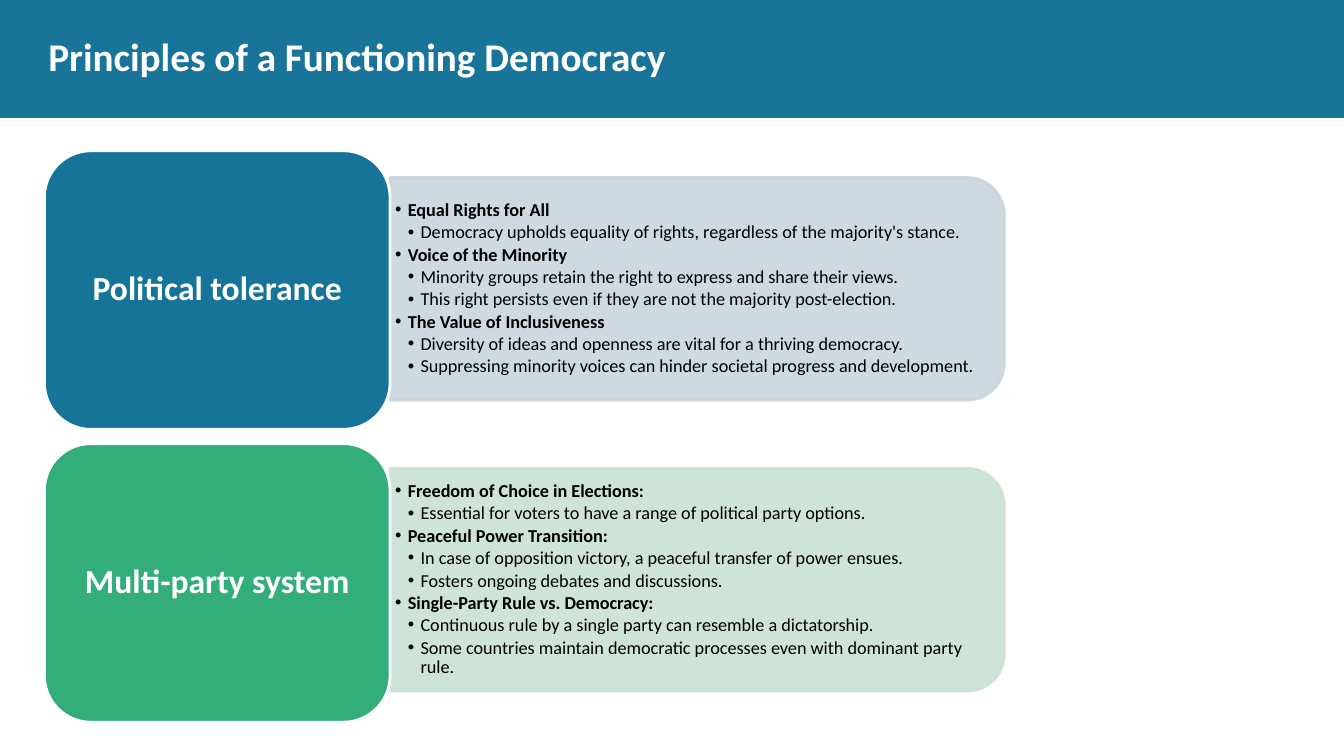
from lxml import etree
from pptx import Presentation
from pptx import util as u
from pptx.dml.color import RGBColor
from pptx.enum import shapes, text
from pptx.oxml.ns import qn

TITLE = "Principles of a Functioning Democracy"
PRINCIPLES = [
    ("Political tolerance", "blue", "pale_blue", [
        ("Equal Rights for All", [
            "Democracy upholds equality of rights, regardless of the majority's stance."]),
        ("Voice of the Minority", [
            "Minority groups retain the right to express and share their views.",
            "This right persists even if they are not the majority post-election."]),
        ("The Value of Inclusiveness", [
            "Diversity of ideas and openness are vital for a thriving democracy.",
            "Suppressing minority voices can hinder societal progress and development."]),
    ]),
    ("Multi-party system", "green", "pale_green", [
        ("Freedom of Choice in Elections:", [
            "Essential for voters to have a range of political party options."]),
        ("Peaceful Power Transition:", [
            "In case of opposition victory, a peaceful transfer of power ensues.",
            "Fosters ongoing debates and discussions."]),
        ("Single-Party Rule vs. Democracy:", [
            "Continuous rule by a single party can resemble a dictatorship.",
            "Some countries maintain democratic processes even with dominant party rule."]),
    ]),
]
COLORS = {"band": "187498", "blue": "157498", "green": "33AE7B", "pale_blue": "C9D5DD",
          "pale_green": "CAE2D4", "white": "FFFFFF", "black": "000000"}
FONT = "Calibri"
INDENT = 0.32
SLIDE_W, SLIDE_H, BAND_H = 33.87, 19.05, 2.97
LABEL_X, LABEL_Y, LABEL_W, LABEL_H, LABEL_STEP = 1.12, 3.8, 8.71, 7.02, 7.38
PANEL_X, PANEL_MID, PANEL_W, PANEL_H, PANEL_STEP = 9.83, 7.28, 15.48, 5.61, 7.33
BODY_W, BODY_H = 15.2, 5.08


def color(name):
    return RGBColor.from_string(COLORS[name])


def add_text(p, content, size, name="white", bold=True, align=None, spacing=None,
             before=0, level=None):
    r = p.add_run()
    r.text = content
    r.font.name, r.font.size, r.font.bold = FONT, u.Pt(size), bold
    r.font.color.rgb = color(name)
    p.alignment, p.line_spacing, p.space_before = align, spacing, u.Pt(before)
    if level is not None:
        p.level = level
        pPr = p._p.get_or_add_pPr()
        pPr.set("marL", str(u.Cm(INDENT * (level + 1))))
        pPr.set("indent", str(-u.Cm(INDENT)))
        etree.SubElement(pPr, qn("a:buFont")).set("typeface", "Arial")
        etree.SubElement(pPr, qn("a:buChar")).set("char", "•")


def add_shape(s, kind, x, y, w, h, fill, line=None, adjust=(), alpha=None):
    sp = s.shapes.add_shape(kind, u.Cm(x), u.Cm(y), u.Cm(w), u.Cm(h))
    sp.shadow.inherit = False
    sp.fill.solid()
    sp.fill.fore_color.rgb = color(fill)
    if line:
        sp.line.color.rgb = color(line)
        sp.line.width = u.Pt(2)
    else:
        sp.line.fill.background()
    for i, value in enumerate(adjust):
        sp.adjustments[i] = value
    if alpha:
        for clr in sp._element.spPr.iter(qn("a:srgbClr")):
            etree.SubElement(clr, qn("a:alpha")).set("val", str(alpha * 1000))
    return sp


def set_frame(tf, side, end):
    tf.word_wrap = True
    tf.vertical_anchor = text.MSO_ANCHOR.MIDDLE
    tf.margin_left = tf.margin_right = u.Cm(side)
    tf.margin_top = tf.margin_bottom = u.Cm(end)
    return tf


def add_panel(s, mid, fill, points):
    x = PANEL_X + (PANEL_W - PANEL_H) / 2
    sp = add_shape(s, shapes.MSO_SHAPE.ROUND_2_SAME_RECTANGLE, x, mid - PANEL_W / 2,
                   PANEL_H, PANEL_W, fill, line=fill, adjust=(0.167, 0), alpha=90)
    sp.rotation = 90
    box = s.shapes.add_textbox(u.Cm(PANEL_X), u.Cm(mid - BODY_H / 2), u.Cm(BODY_W), u.Cm(BODY_H))
    tf = set_frame(box.text_frame, 0.13, 0.08)
    lines = [(line, level) for head, details in points
             for line, level in [(head, 0)] + [(d, 1) for d in details]]
    for i, (line, level) in enumerate(lines):
        p = tf.add_paragraph() if i else tf.paragraphs[0]
        add_text(p, line, 13, "black", bold=level == 0, spacing=0.9,
                 before=1.9 if i else 0, level=level)


def add_label(s, y, fill, label):
    sp = add_shape(s, shapes.MSO_SHAPE.ROUNDED_RECTANGLE, LABEL_X, y, LABEL_W, LABEL_H,
                   fill, line="white", adjust=(0.167,))
    tf = set_frame(sp.text_frame, 0.25, 0.13)
    add_text(tf.paragraphs[0], label, 24, align=text.PP_ALIGN.CENTER, spacing=0.9)


def main():
    prs = Presentation()
    prs.slide_width, prs.slide_height = u.Cm(SLIDE_W), u.Cm(SLIDE_H)
    s = prs.slides.add_slide(prs.slide_layouts[5])
    band = add_shape(s, shapes.MSO_SHAPE.RECTANGLE, 0, 0, SLIDE_W, BAND_H, "band")
    s.shapes._spTree.insert(2, band._element)

    title = s.shapes.title
    title.left, title.top, title.width, title.height = map(u.Cm, (1.22, 0.46, 31.65, 1.88))
    tf = set_frame(title.text_frame, 0, 0)
    add_text(tf.paragraphs[0], TITLE, 28, align=text.PP_ALIGN.LEFT)

    for i, (label, fill, pale, points) in enumerate(PRINCIPLES):
        add_panel(s, PANEL_MID + i * PANEL_STEP, pale, points)
        add_label(s, LABEL_Y + i * LABEL_STEP, fill, label)
    prs.save("out.pptx")


if __name__ == "__main__":
    main()
